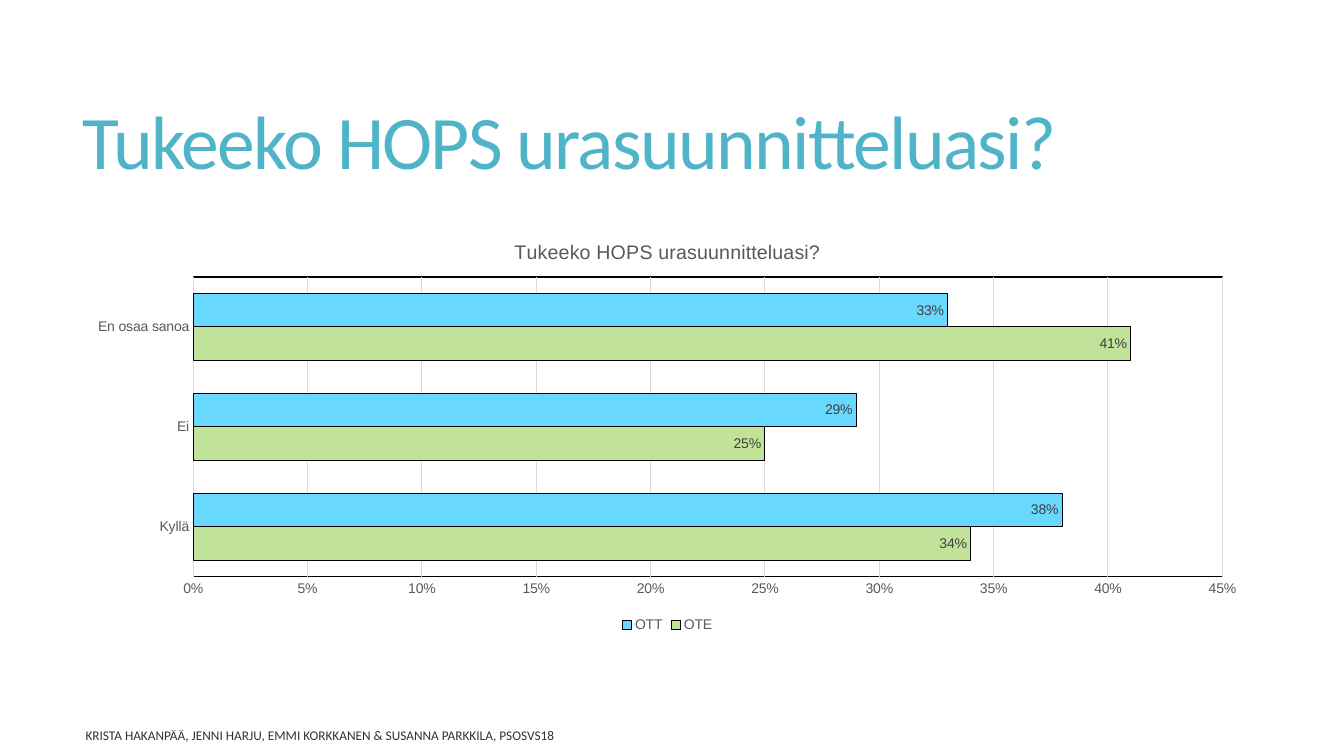
from lxml import etree
from pptx import Presentation
from pptx.chart.data import CategoryChartData
from pptx.dml.color import RGBColor
from pptx.enum.chart import (XL_CHART_TYPE, XL_LABEL_POSITION as LabelPosition,
                             XL_LEGEND_POSITION as LegendPosition, XL_TICK_MARK as TickMark)
from pptx.enum.text import MSO_ANCHOR
from pptx.oxml import parse_xml
from pptx.oxml.ns import nsdecls, qn
from pptx.util import Inches, Pt

TEAL = RGBColor(0x50, 0xB4, 0xC8)
BLACK = RGBColor(0, 0, 0)
DARK_GREY = RGBColor(0x40, 0x40, 0x40)
GREY = RGBColor(0x59, 0x59, 0x59)
LIGHT_GREY = RGBColor(0xD9, 0xD9, 0xD9)
GREEN = RGBColor(0xC0, 0xE3, 0x99)
BLUE = RGBColor(0x69, 0xD8, 0xFF)

QUESTION = "Tukeeko HOPS urasuunnitteluasi?"
AUTHORS = "KRISTA HAKANPÄÄ, JENNI HARJU, EMMI KORKKANEN & SUSANNA PARKKILA, PSOSVS18"
CATEGORIES = ["Kyllä", "Ei", "En osaa sanoa"]
SERIES = {"OTE": (GREEN, [0.34, 0.25, 0.41]), "OTT": (BLUE, [0.38, 0.29, 0.33])}

# Boxes: left, top, width, height in inches
TITLE_BOX = (0.72, 0.55, 11.78, 1.81)
CHART_BOX = (0.74, 2.2, 11.76, 4.12)
FOOTER_BOX = (0.75, 7.17, 5.5, 0.25)
# Plot area as shares of the chart box
PLOT_SHARES = {"x": 0.1, "y": 0.133, "w": 0.868, "h": 0.722}


def set_attributes(target, values):
    for name, value in values.items():
        setattr(target, name, value)


def set_font(font, size, color, name="Arial"):
    set_attributes(font, {"size": Pt(size), "name": name, "bold": False})
    font.color.rgb = color


def set_line(line, color):
    line.color.rgb = color
    line.width = Pt(0.75)


def add_text(slide, box, text, size, color, spacing=1.0):
    frame = slide.shapes.add_textbox(*map(Inches, box)).text_frame
    set_attributes(frame, {"word_wrap": True, "vertical_anchor": MSO_ANCHOR.MIDDLE})
    paragraph = frame.paragraphs[0]
    paragraph.line_spacing = spacing
    run = paragraph.add_run()
    run.text = text
    set_font(run.font, size, color, "Calibri")
    return run


def add_title(slide, box):
    run = add_text(slide, box, QUESTION, 54, TEAL, 0.85)
    run.font._element.set("spc", "-120")


def add_footer(slide, box):
    run = add_text(slide, box, AUTHORS, 9.5, BLACK)
    color = run.font._element.find(".//" + qn("a:srgbClr"))
    etree.SubElement(color, qn("a:alpha")).set("val", "80000")


def format_plot_area(chart):
    """Fix the inner plot position and outline the plot area."""
    plot_area = chart._chartSpace.chart.plotArea
    for layout in plot_area.findall(qn("c:layout")):
        plot_area.remove(layout)
    modes = '<c:layoutTarget val="inner"/><c:xMode val="edge"/><c:yMode val="edge"/>'
    shares = "".join(f'<c:{key} val="{share}"/>' for key, share in PLOT_SHARES.items())
    plot_area.insert(0, parse_xml(
        f'<c:layout {nsdecls("c")}><c:manualLayout>{modes}{shares}</c:manualLayout></c:layout>'))
    plot_area.append(parse_xml(
        f'<c:spPr {nsdecls("c", "a")}><a:noFill/><a:ln w="9525"><a:solidFill>'
        f'<a:srgbClr val="{BLACK}"/></a:solidFill></a:ln></c:spPr>'))


def format_axes(chart):
    for axis in (chart.category_axis, chart.value_axis):
        set_attributes(axis, {"major_tick_mark": TickMark.NONE, "minor_tick_mark": TickMark.NONE})
        set_font(axis.tick_labels.font, 10, GREY)
    set_line(chart.category_axis.format.line, LIGHT_GREY)
    value_axis = chart.value_axis
    set_attributes(value_axis, {"minimum_scale": 0, "maximum_scale": 0.45, "major_unit": 0.05})
    set_attributes(value_axis.tick_labels, {"number_format": "0%", "number_format_is_linked": False})
    value_axis.format.line.fill.background()
    set_line(value_axis.major_gridlines.format.line, LIGHT_GREY)


def format_series(plot):
    set_attributes(plot, {"gap_width": 100, "overlap": 0, "vary_by_categories": False})
    for series in plot.series:
        series.format.fill.solid()
        series.format.fill.fore_color.rgb = SERIES[series.name][0]
        set_line(series.format.line, BLACK)
        labels = series.data_labels
        set_attributes(labels, {"show_value": True, "position": LabelPosition.INSIDE_END,
                                "number_format": "0%", "number_format_is_linked": False})
        set_font(labels.font, 10, DARK_GREY)


def add_answer_chart(slide, box):
    data = CategoryChartData(number_format="0%")
    data.categories = CATEGORIES
    for name, (_, values) in SERIES.items():
        data.add_series(name, values)
    chart = slide.shapes.add_chart(XL_CHART_TYPE.BAR_CLUSTERED, *map(Inches, box), data).chart
    set_font(chart.font, 10, BLACK, "Calibri")

    # Heading and legend
    set_attributes(chart, {"has_title": True, "has_legend": True})
    heading = chart.chart_title.text_frame.paragraphs[0].add_run()
    heading.text = QUESTION
    set_font(heading.font, 14, GREY)
    set_attributes(chart.legend, {"position": LegendPosition.BOTTOM, "include_in_layout": False})
    set_font(chart.legend.font, 10, GREY)

    format_axes(chart)
    format_series(chart.plots[0])
    format_plot_area(chart)


def main():
    presentation = Presentation()
    set_attributes(presentation, {"slide_width": Inches(13.33), "slide_height": Inches(7.5)})
    slide = presentation.slides.add_slide(presentation.slide_layouts[6])
    add_title(slide, TITLE_BOX)
    add_footer(slide, FOOTER_BOX)
    add_answer_chart(slide, CHART_BOX)
    presentation.save("out.pptx")


if __name__ == "__main__":
    main()
